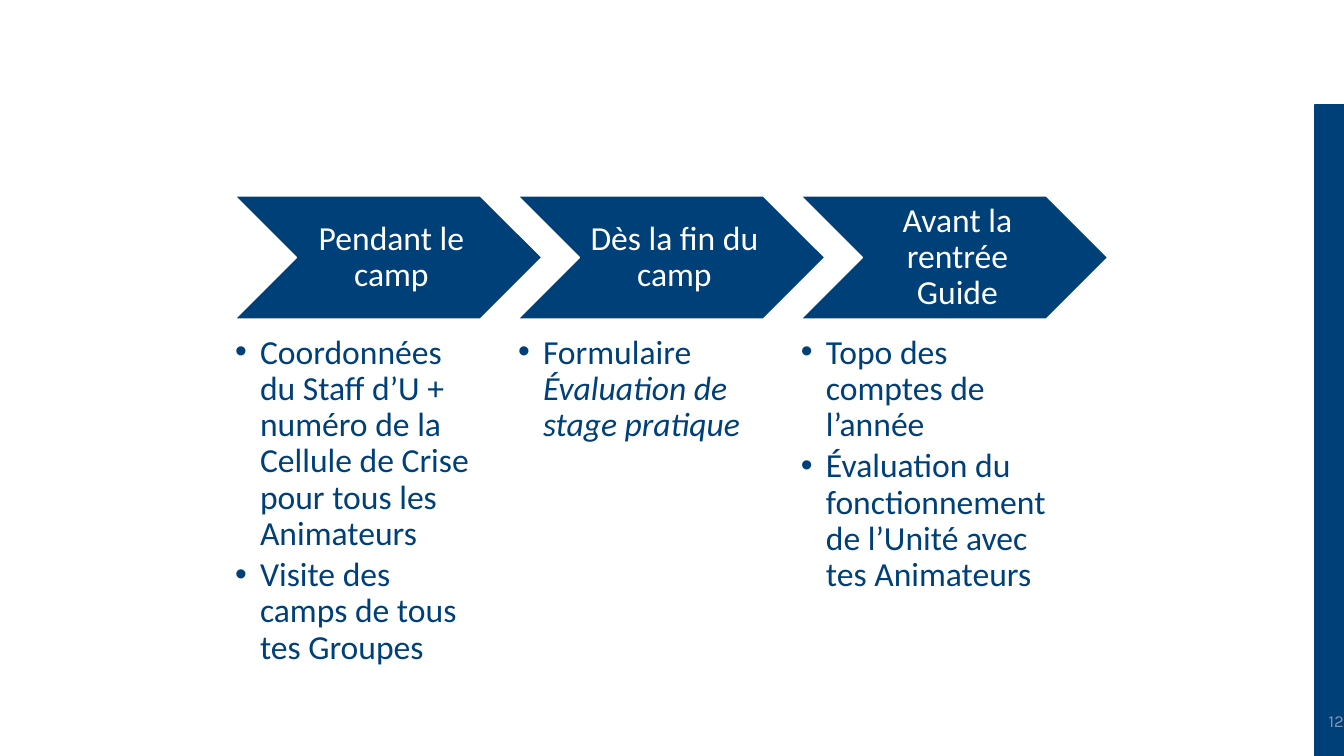
from dataclasses import dataclass

from lxml import etree
from pptx import Presentation
from pptx.dml.color import RGBColor
from pptx.enum.shapes import MSO_SHAPE
from pptx.enum.text import MSO_ANCHOR, PP_ALIGN
from pptx.oxml.ns import qn
from pptx.util import Emu, Pt


@dataclass(frozen=True)
class Theme:
    navy: RGBColor = RGBColor(0x00, 0x40, 0x79)
    white: RGBColor = RGBColor(0xFF, 0xFF, 0xFF)
    grey: RGBColor = RGBColor(0x8C, 0x93, 0xA8)
    body_font: str = "Calibri"
    number_font: str = "Karla"
    body_size: Pt = Pt(24)
    number_size: Pt = Pt(12)
    outline: Pt = Pt(0.75)
    border: Pt = Pt(1)
    bullet_gap: Pt = Pt(3.6)
    line_spacing: float = 0.9


THEME = Theme()
SLIDE_WIDTH, SLIDE_HEIGHT = 1344, 756
STAGE_LEFT, STAGE_STEP = 235, 283
CHEVRON_TOP, CHEVRON_WIDTH, CHEVRON_HEIGHT = 196, 307, 123
TASKS_TOP, TASKS_WIDTH, TASKS_HEIGHT = 335, 246, 340
BULLET_INDENT = 25

# Each task is a list of (text, italic) runs.
STAGES = [
    ("Pendant le camp", [
        [("Coordonnées du Staff d’U + numéro de la Cellule de Crise "
          "pour tous les Animateurs", False)],
        [("Visite des camps de tous tes Groupes", False)],
    ]),
    ("Dès la fin du camp", [
        [("Formulaire ", False), ("Évaluation de stage pratique", True)],
    ]),
    ("Avant la rentrée Guide", [
        [("Topo des comptes de l’année", False)],
        [("Évaluation du fonctionnement de l’Unité avec tes Animateurs", False)],
    ]),
]


def px(length):
    return Emu(round(length * 914400 / 100.8))


def box(left, top, width, height):
    return px(left), px(top), px(width), px(height)


def set_frame(frame, anchor, left=0, top=0, right=0, bottom=0):
    frame.word_wrap = True
    frame.vertical_anchor = anchor
    frame.margin_left, frame.margin_top = px(left), px(top)
    frame.margin_right, frame.margin_bottom = px(right), px(bottom)


def add_run(paragraph, text, color, size=THEME.body_size,
            font=THEME.body_font, italic=False):
    run = paragraph.add_run()
    run.text = text
    run.font.name = font
    run.font.size = size
    run.font.color.rgb = color
    if italic:
        run.font.italic = True
    return run


def add_bullet(paragraph):
    properties = paragraph._p.get_or_add_pPr()
    properties.set("marL", str(px(BULLET_INDENT)))
    properties.set("indent", str(-px(BULLET_INDENT)))
    bullet_font = etree.SubElement(properties, qn("a:buFont"))
    bullet_font.set("typeface", "Arial")
    etree.SubElement(properties, qn("a:buChar")).set("char", "•")


def add_filled_shape(slide, kind, bounds, line_color):
    shape = slide.shapes.add_shape(kind, *bounds)
    shape.shadow.inherit = False
    shape.fill.solid()
    shape.fill.fore_color.rgb = THEME.navy
    shape.line.color.rgb = line_color
    shape.line.width = THEME.border
    return shape


def add_chevron(slide, left, stage):
    bounds = box(left, CHEVRON_TOP, CHEVRON_WIDTH, CHEVRON_HEIGHT)
    chevron = add_filled_shape(slide, MSO_SHAPE.CHEVRON, bounds, THEME.white)
    set_frame(chevron.text_frame, MSO_ANCHOR.MIDDLE, 10, 4, 4, 4)
    label = chevron.text_frame.paragraphs[0]
    label.alignment = PP_ALIGN.CENTER
    label.line_spacing = THEME.line_spacing
    add_run(label, stage, THEME.white)


def add_tasks(slide, left, tasks):
    bounds = box(left, TASKS_TOP, TASKS_WIDTH, TASKS_HEIGHT)
    frame = slide.shapes.add_textbox(*bounds).text_frame
    set_frame(frame, MSO_ANCHOR.TOP)
    for index, task in enumerate(tasks):
        paragraph = frame.add_paragraph() if index else frame.paragraphs[0]
        add_bullet(paragraph)
        paragraph.line_spacing = THEME.line_spacing
        paragraph.space_after = THEME.bullet_gap
        for text, italic in task:
            add_run(paragraph, text, THEME.navy, italic=italic)


def add_text_outline(run):
    """Give the letters a thin white contour."""
    outline = etree.Element(qn("a:ln"), w=str(THEME.outline))
    fill = etree.SubElement(outline, qn("a:solidFill"))
    etree.SubElement(fill, qn("a:srgbClr")).set("val", str(THEME.white))
    run.font._element.insert(0, outline)


def add_page_number(slide, number):
    frame = slide.shapes.add_textbox(*box(1044, 701, 300, 40)).text_frame
    set_frame(frame, MSO_ANCHOR.MIDDLE)
    paragraph = frame.paragraphs[0]
    paragraph.alignment = PP_ALIGN.RIGHT
    add_text_outline(add_run(paragraph, number, THEME.grey,
                             THEME.number_size, THEME.number_font))


def main():
    presentation = Presentation()
    presentation.slide_width = px(SLIDE_WIDTH)
    presentation.slide_height = px(SLIDE_HEIGHT)
    slide = presentation.slides.add_slide(presentation.slide_layouts[6])

    add_filled_shape(slide, MSO_SHAPE.RECTANGLE, box(1315, 105, 29, 651), THEME.navy)
    add_page_number(slide, "12")
    for index, (stage, tasks) in enumerate(STAGES):
        left = STAGE_LEFT + index * STAGE_STEP
        add_chevron(slide, left, stage)
        add_tasks(slide, left, tasks)

    presentation.save("out.pptx")


if __name__ == "__main__":
    main()
